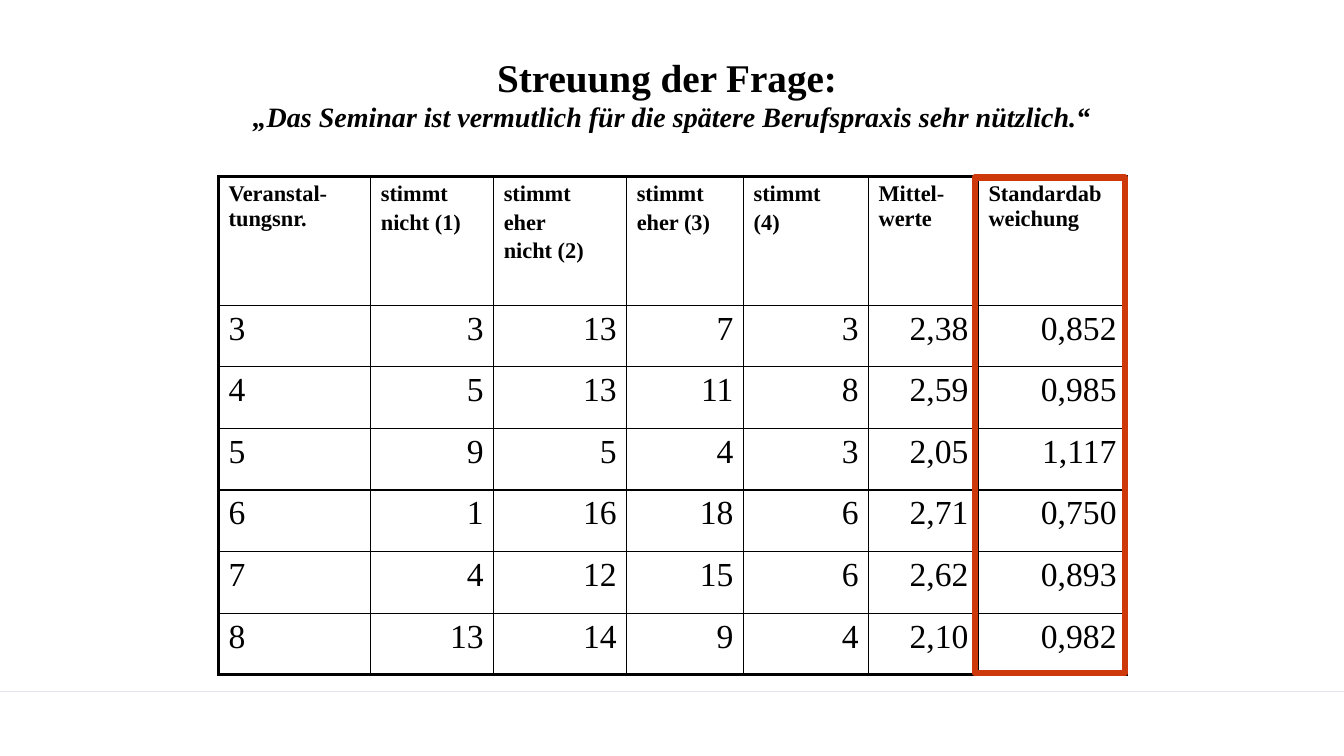
from dataclasses import dataclass

from lxml import etree
from pptx import Presentation
from pptx.dml.color import RGBColor
from pptx.enum import shapes, text
from pptx.oxml import ns
from pptx.util import Pt

HEADING = "Streuung der Frage: "
QUESTION = "„Das Seminar ist vermutlich für die spätere Berufspraxis sehr nützlich.“"
HEADERS = [
    "Veranstal-tungsnr.",
    "stimmt\nnicht (1)",
    "stimmt\neher\nnicht (2)",
    "stimmt\neher (3)",
    "stimmt\n(4)",
    "Mittel-werte",
    "Standardabweichung",
]
SEMINARS = [
    ("3", "3", "13", "7", "3", "2,38", "0,852"),
    ("4", "5", "13", "11", "8", "2,59", "0,985"),
    ("5", "9", "5", "4", "3", "2,05", "1,117"),
    ("6", "1", "16", "18", "6", "2,71", "0,750"),
    ("7", "4", "12", "15", "6", "2,62", "0,893"),
    ("8", "13", "14", "9", "4", "2,10", "0,982"),
]


@dataclass(frozen=True)
class Theme:
    font: str = "Times New Roman"
    ink: str = "000000"
    accent: str = "CD390B"
    rule: str = "E4E5EA"
    heading: float = 28
    question: float = 20
    header: float = 16
    value: float = 24
    inner_border: float = 1
    outer_border: float = 2.25


THEME = Theme()
SLIDE_W, SLIDE_H = 960, 540
TITLE_BOX = (48, 21.6, 864, 90)
TABLE_LEFT, TABLE_TOP = 156.2, 126
COLUMN_WIDTHS = [108.7, 87.8, 95, 83.5, 89.3, 78.5, 105.8]
ROW_HEIGHTS = [92] + [44] * len(SEMINARS)
HEADER_GAP = 2.7
HIGHLIGHT_BOX = (696.2, 126.7, 107.3, 354.2)
RULE_Y = 493.9


def points(*lengths):
    return [Pt(length) for length in lengths]


def style_font(font, size, bold=False, italic=False):
    font.name = THEME.font
    font.size = Pt(size)
    font.bold = bold
    font.italic = italic
    font.color.rgb = RGBColor.from_string(THEME.ink)


def add_borders(cell, widths):
    """Draw the cell's left, right, top and bottom lines, in that order."""
    properties = cell._tc.get_or_add_tcPr()
    for position, (side, width) in enumerate(zip("LRTB", widths)):
        border = etree.Element(ns.qn(f"a:ln{side}"), w=str(Pt(width)))
        fill = etree.SubElement(border, ns.qn("a:solidFill"))
        etree.SubElement(fill, ns.qn("a:srgbClr"), val=THEME.ink)
        properties.insert(position, border)


def fill_title(slide):
    title = slide.shapes.title
    title.left, title.top, title.width, title.height = points(*TITLE_BOX)
    frame = title.text_frame
    frame.text = f"{HEADING}\v{QUESTION}"
    frame.auto_size = text.MSO_AUTO_SIZE.NONE
    frame.vertical_anchor = text.MSO_ANCHOR.MIDDLE
    paragraph = frame.paragraphs[0]
    paragraph.alignment = text.PP_ALIGN.CENTER
    heading, question = paragraph.runs
    style_font(heading.font, THEME.heading, bold=True)
    style_font(question.font, THEME.question, bold=True, italic=True)


def fill_cell(cell, content, is_header, is_number):
    cell.fill.background()
    cell.text_frame.text = content
    for index, paragraph in enumerate(cell.text_frame.paragraphs):
        paragraph.alignment = text.PP_ALIGN.RIGHT if is_number else text.PP_ALIGN.LEFT
        if index:
            paragraph.space_before = Pt(HEADER_GAP)
        for run in paragraph.runs:
            style_font(run.font, THEME.header if is_header else THEME.value, bold=is_header)


def add_ratings(slide):
    rows = [HEADERS, *SEMINARS]
    last_row, last_column = len(rows) - 1, len(HEADERS) - 1
    frame = slide.shapes.add_table(
        len(rows), len(HEADERS),
        *points(TABLE_LEFT, TABLE_TOP, sum(COLUMN_WIDTHS), sum(ROW_HEIGHTS)))
    ratings = frame.table
    ratings.first_row = ratings.horz_banding = False
    for column, width in zip(ratings.columns, COLUMN_WIDTHS):
        column.width = Pt(width)
    for row, height in zip(ratings.rows, ROW_HEIGHTS):
        row.height = Pt(height)
    for r, row in enumerate(rows):
        for c, content in enumerate(row):
            cell = ratings.cell(r, c)
            fill_cell(cell, content, is_header=r == 0, is_number=r > 0 and c > 0)
            on_edge = (c == 0, c == last_column, r == 0, r == last_row)
            add_borders(cell, [THEME.outer_border if edge else THEME.inner_border
                               for edge in on_edge])


def add_highlight(slide):
    highlight = slide.shapes.add_shape(
        shapes.MSO_SHAPE.RECTANGLE, *points(*HIGHLIGHT_BOX))
    highlight.shadow.inherit = False
    highlight.fill.background()
    highlight.line.color.rgb = RGBColor.from_string(THEME.accent)
    highlight.line.width = Pt(4.5)


def add_footer_rule(slide):
    rule = slide.shapes.add_connector(
        shapes.MSO_CONNECTOR.STRAIGHT, *points(0, RULE_Y, SLIDE_W, RULE_Y))
    rule.line.color.rgb = RGBColor.from_string(THEME.rule)
    rule.line.width = Pt(0.5)
    etree.SubElement(rule._element.spPr, ns.qn("a:effectLst"))


def main():
    deck = Presentation()
    deck.slide_width, deck.slide_height = points(SLIDE_W, SLIDE_H)
    slide = deck.slides.add_slide(deck.slide_layouts.get_by_name("Title Only"))
    add_footer_rule(slide)
    fill_title(slide)
    add_ratings(slide)
    add_highlight(slide)
    deck.save("out.pptx")


if __name__ == "__main__":
    main()
